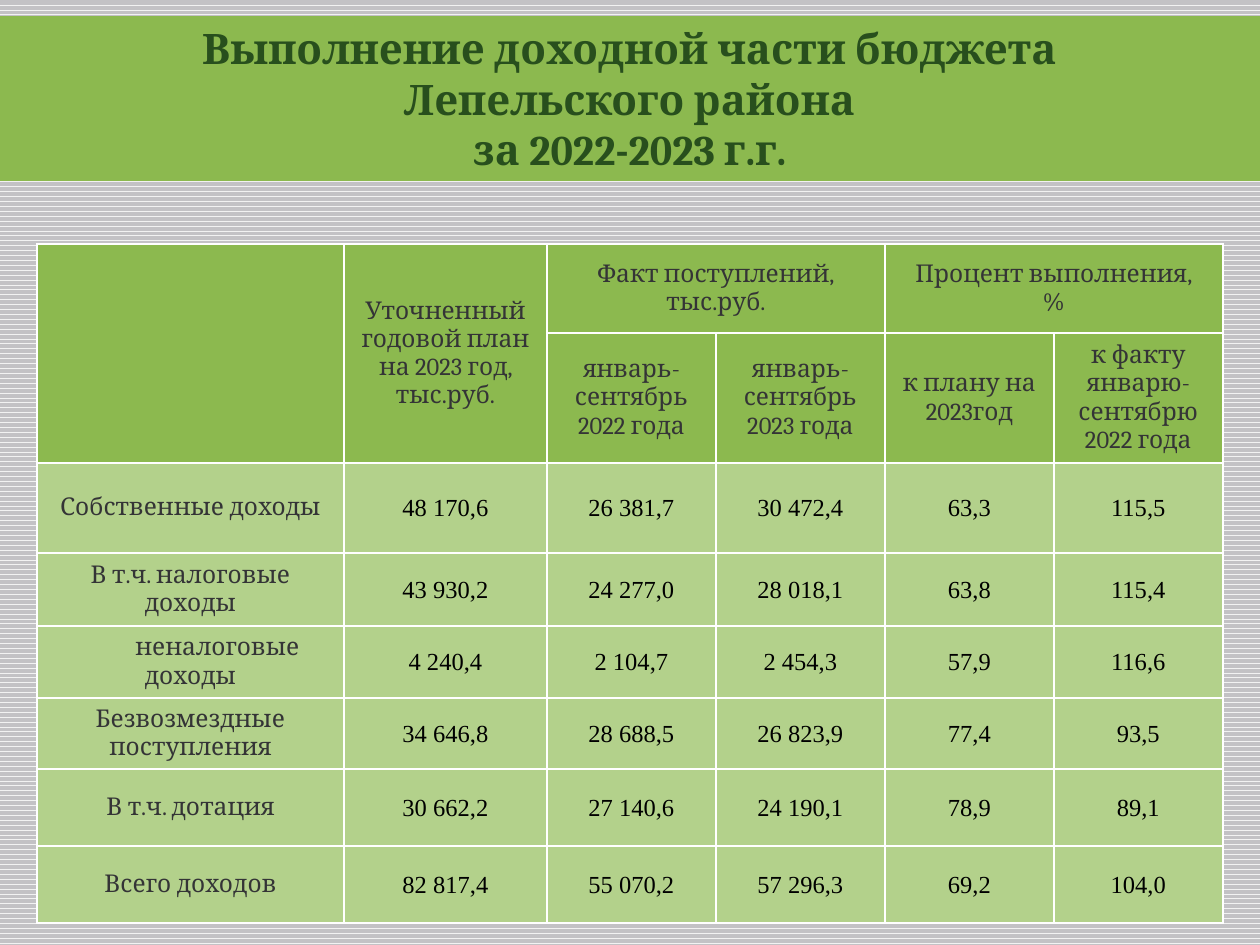
from lxml.etree import SubElement
from pptx import Presentation
from pptx.dml.color import RGBColor
from pptx.enum.dml import MSO_PATTERN
from pptx.enum.text import MSO_ANCHOR, MSO_AUTO_SIZE, PP_ALIGN
from pptx.oxml import parse_xml
from pptx.oxml.ns import nsdecls, qn
from pptx.util import Emu, Pt

PX_PER_INCH = 126
GREEN = RGBColor(0x8C, 0xB9, 0x4F)
PALE_GREEN = RGBColor(0xB3, 0xD1, 0x8B)
DARK_GREEN = RGBColor(0x28, 0x4F, 0x1D)
CHARCOAL = RGBColor(0x34, 0x34, 0x36)
BLACK = RGBColor(0, 0, 0)
WHITE = RGBColor(0xFF, 0xFF, 0xFF)
STRIPE = RGBColor(0xF2, 0xF2, 0xF2)
GREY = RGBColor(0xC3, 0xC2, 0xC5)

TITLE = ["Выполнение доходной части бюджета", "Лепельского района", "за 2022-2023 г.г."]
COLUMN_WIDTHS = [307, 203, 169, 169, 169, 169]
ROW_HEIGHTS = [89, 130, 90, 73, 72, 71, 77, 77]
# (row, column): (text, rows spanned, columns spanned)
HEADERS = {
    (0, 0): ("", 2, 1),
    (0, 1): ("Уточненный годовой план на 2023 год, тыс.руб.", 2, 1),
    (0, 2): ("Факт поступлений,\nтыс.руб.", 1, 2),
    (0, 4): ("Процент выполнения,\n%", 1, 2),
    (1, 2): ("январь-сентябрь 2022 года", 1, 1),
    (1, 3): ("январь-сентябрь 2023 года", 1, 1),
    (1, 4): ("к плану на 2023год", 1, 1),
    (1, 5): ("к факту январю-сентябрю 2022 года", 1, 1),
}
INDENTED = "неналоговые доходы"
INCOME = [
    ("Собственные доходы", "48 170,6", "26 381,7", "30 472,4", "63,3", "115,5"),
    ("В т.ч. налоговые доходы", "43 930,2", "24 277,0", "28 018,1", "63,8", "115,4"),
    (INDENTED, "4 240,4", "2 104,7", "2 454,3", "57,9", "116,6"),
    ("Безвозмездные поступления", "34 646,8", "28 688,5", "26 823,9", "77,4", "93,5"),
    ("В т.ч. дотация", "30 662,2", "27 140,6", "24 190,1", "78,9", "89,1"),
    ("Всего доходов", "82 817,4", "55 070,2", "57 296,3", "69,2", "104,0"),
]


def px(length):
    return Emu(round(length * 914400 / PX_PER_INCH))


def write(frame, text, size, color, font="Cambria", bold=False):
    frame.text = text
    for para in frame.paragraphs:
        para.alignment = PP_ALIGN.CENTER
        para.font.size = Pt(size)
        para.font.name = font
        para.font.bold = bold
        para.font.color.rgb = color


def add_title(page, left, top, width, height):
    title = page.shapes.title
    title.left, title.top, title.width, title.height = map(px, (left, top, width, height))
    title.fill.solid()
    title.fill.fore_color.rgb = GREEN
    frame = title.text_frame
    write(frame, "\n".join(TITLE), 24, DARK_GREEN, bold=True)
    frame.auto_size = MSO_AUTO_SIZE.NONE
    frame.word_wrap = True
    frame.vertical_anchor = MSO_ANCHOR.MIDDLE


def style_cell(cell, color):
    cell.vertical_anchor = MSO_ANCHOR.MIDDLE
    properties = cell._tc.get_or_add_tcPr()
    for side in ("lnL", "lnR", "lnT", "lnB"):
        properties.append(parse_xml(
            f'<a:{side} {nsdecls("a")} w="{Pt(1)}"><a:solidFill>'
            f'<a:srgbClr val="{WHITE}"/></a:solidFill></a:{side}>'))
    cell.fill.solid()
    cell.fill.fore_color.rgb = color


def add_income_table(page, left, top):
    table = page.shapes.add_table(
        len(ROW_HEIGHTS), len(COLUMN_WIDTHS), px(left), px(top),
        px(sum(COLUMN_WIDTHS)), px(sum(ROW_HEIGHTS))).table
    for column, width in zip(table.columns, COLUMN_WIDTHS):
        column.width = px(width)
    for row, height in zip(table.rows, ROW_HEIGHTS):
        row.height = px(height)
    for r in range(len(ROW_HEIGHTS)):
        for c in range(len(COLUMN_WIDTHS)):
            style_cell(table.cell(r, c), GREEN if r < 2 else PALE_GREEN)

    # Two-level header
    for (r, c), (text, rows, columns) in HEADERS.items():
        cell = table.cell(r, c)
        if rows * columns > 1:
            cell.merge(table.cell(r + rows - 1, c + columns - 1))
        write(cell.text_frame, text, 14, CHARCOAL)

    # Income rows: a label, then figures
    for r, (label, *figures) in enumerate(INCOME, start=2):
        frame = table.cell(r, 0).text_frame
        write(frame, label, 14, CHARCOAL)
        if label == INDENTED:
            frame.paragraphs[0]._p.get_or_add_pPr().set("indent", str(px(54)))
        for c, figure in enumerate(figures, start=1):
            cell = table.cell(r, c)
            cell.margin_left = cell.margin_right = cell.margin_top = px(1)
            cell.margin_bottom = 0
            write(cell.text_frame, figure, 14, BLACK, "Times New Roman")


def main():
    deck = Presentation()
    deck.slide_width, deck.slide_height = px(1260), px(945)
    page = deck.slides.add_slide(deck.slide_layouts[5])

    # Striped background
    fill = page.background.fill
    fill.patterned()
    fill.pattern = MSO_PATTERN.WAVE
    fill.fore_color.rgb = STRIPE
    fill.back_color.rgb = GREY

    add_title(page, -1, 16, 1261, 165)
    add_income_table(page, 37, 244)
    deck.save("out.pptx")


if __name__ == "__main__":
    main()
